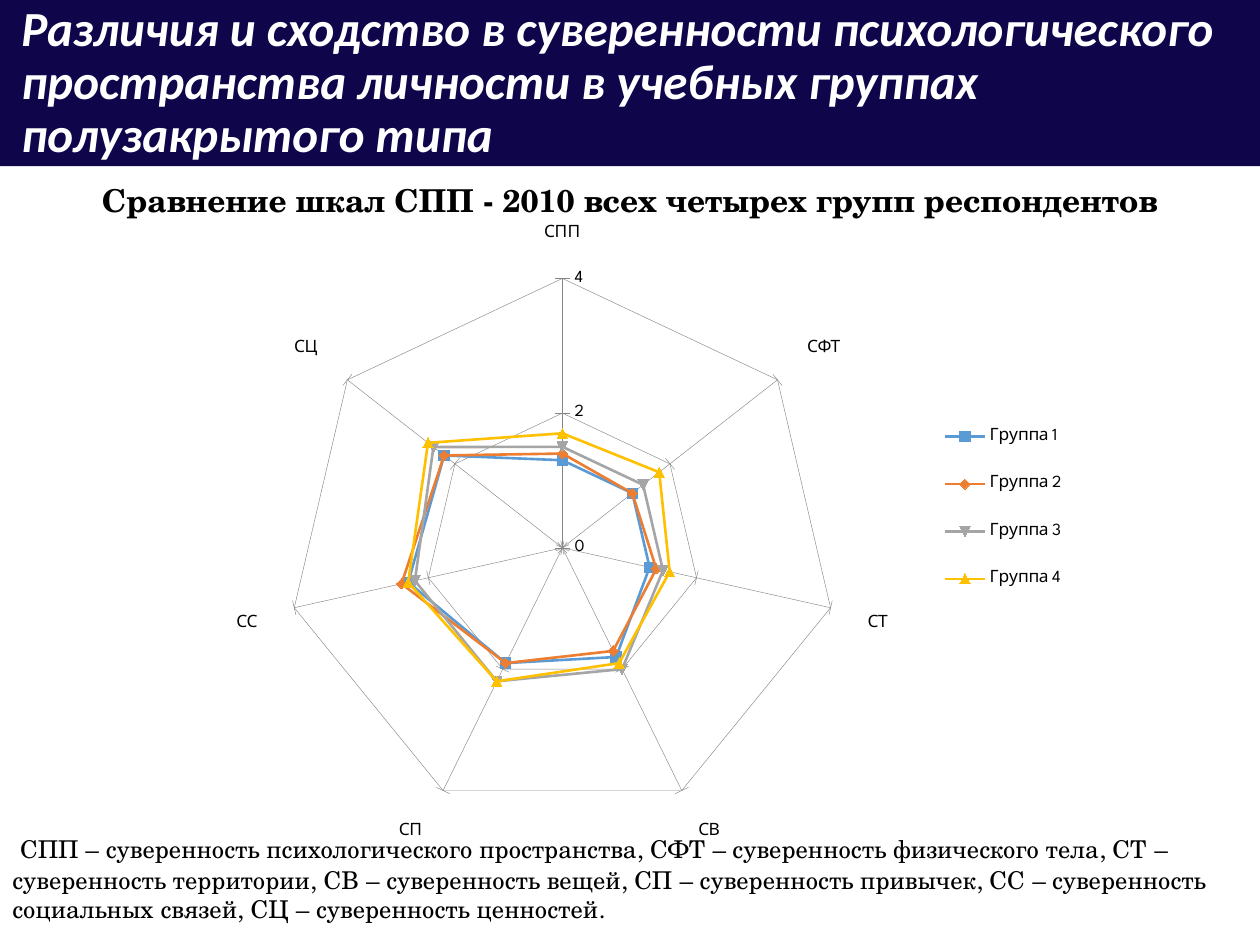
import lxml.etree
import pptx
import pptx.chart.data
import pptx.dml.color
import pptx.enum.chart
import pptx.enum.shapes
import pptx.enum.text
import pptx.oxml.ns
import pptx.util

Pt = pptx.util.Pt
RGB = pptx.dml.color.RGBColor
ALIGN = pptx.enum.text.PP_ALIGN
ANCHOR = pptx.enum.text.MSO_ANCHOR
qn = pptx.oxml.ns.qn

NAVY = RGB(0x0E, 0x05, 0x4B)
WHITE = RGB(0xFF, 0xFF, 0xFF)
BLACK = RGB(0, 0, 0)
GRID = RGB(0x86, 0x86, 0x86)
BLUE = RGB(0x5B, 0x9B, 0xD5)
ORANGE = RGB(0xED, 0x7D, 0x31)
GRAY = RGB(0xA5, 0xA5, 0xA5)
GOLD = RGB(0xFF, 0xC0, 0x00)

SERIF = "TeX Gyre Schola"
SANS = "League Spartan"
SCALES = ["СПП", "СФТ", "СТ", "СВ", "СП ", "СС", "СЦ"]
GROUPS = [
    ("Группа 1", BLUE, (1.3, 1.3, 1.3, 1.8, 1.9, 2.3, 2.2)),
    ("Группа 2", ORANGE, (1.4, 1.3, 1.4, 1.7, 1.9, 2.4, 2.2)),
    ("Группа 3", GRAY, (1.5, 1.5, 1.5, 2.0, 2.2, 2.2, 2.4)),
    ("Группа 4", GOLD, (1.7, 1.8, 1.6, 1.9, 2.2, 2.3, 2.5)),
]


def add_run(p, text, size, font=SERIF, color=BLACK, bold=False, italic=False):
    r = p.add_run()
    r.text = text
    r.font.name = font
    r.font.size = Pt(size)
    r.font.bold = bold
    r.font.italic = italic
    r.font.color.rgb = color


def set_up(tf, align=ALIGN.LEFT, anchor=ANCHOR.TOP, spacing=1.0):
    tf.word_wrap = True
    tf.auto_size = pptx.enum.text.MSO_AUTO_SIZE.NONE
    tf.vertical_anchor = anchor
    p = tf.paragraphs[0]
    p.alignment = align
    p.line_spacing = spacing
    return p


def add_header(s, x, y, w, h):
    band = s.shapes.add_shape(pptx.enum.shapes.MSO_SHAPE.RECTANGLE,
                              Pt(x), Pt(y), Pt(w), Pt(h))
    band.shadow.inherit = False
    band.fill.solid()
    band.fill.fore_color.rgb = NAVY
    band.line.fill.background()
    title = s.shapes.title
    title.element.addprevious(band.element)
    title.left, title.top = Pt(x + 5), Pt(y + 5.5)
    title.width, title.height = Pt(w - 12), Pt(h - 10)
    p = set_up(title.text_frame, anchor=ANCHOR.MIDDLE, spacing=0.9)
    add_run(p, "Различия и сходство в суверенности психологического "
            "пространства личности в учебных группах полузакрытого типа",
            28, font="Calibri", color=WHITE, bold=True, italic=True)


def add_caption(s, x, y, w, h):
    sp = s.shapes.add_textbox(Pt(x), Pt(y), Pt(w), Pt(h))
    p = set_up(sp.text_frame, align=ALIGN.CENTER)
    add_run(p, "Сравнение шкал СПП - 2010 всех четырех групп респондентов",
            18, bold=True)


def add_abbreviations(s, x, y, w, h):
    sp = s.shapes.add_textbox(Pt(x), Pt(y), Pt(w), Pt(h))
    p = set_up(sp.text_frame)
    add_run(p, " ", 18, font=SANS)
    add_run(p, "СПП – суверенность психологического пространства, "
            "СФТ – суверенность физического тела, СТ – суверенность территории, "
            "СВ – суверенность вещей, СП – суверенность привычек, "
            "СС – суверенность социальных связей, СЦ – суверенность ценностей.",
            14)


def set_layout(parent, index, inner, **box):
    layout = parent.find(qn("c:layout"))
    if layout is not None:
        parent.remove(layout)
    layout = lxml.etree.Element(qn("c:layout"))
    parent.insert(index, layout)
    manual = lxml.etree.SubElement(layout, qn("c:manualLayout"))
    settings = {"layoutTarget": "inner"} if inner else {}
    settings.update(xMode="edge", yMode="edge", **box)
    for name, value in settings.items():
        lxml.etree.SubElement(manual, qn("c:" + name)).set("val", str(value))


def style_line(line, color, width):
    line.color.rgb = color
    line.width = Pt(width)


def add_radar(s, x, y, w, h):
    data = pptx.chart.data.CategoryChartData(number_format="0.0")
    data.categories = SCALES
    for name, _, values in GROUPS:
        data.add_series(name, values)
    chart = s.shapes.add_chart(pptx.enum.chart.XL_CHART_TYPE.RADAR_MARKERS,
                               Pt(x), Pt(y), Pt(w), Pt(h), data).chart
    chart.has_title = False
    chart.font.name = SANS
    chart.font.size = Pt(10)
    chart.font.color.rgb = BLACK
    chart.has_legend = True
    chart.legend.position = pptx.enum.chart.XL_LEGEND_POSITION.RIGHT
    chart.legend.include_in_layout = False

    plot = chart.plots[0]
    plot.vary_by_categories = False
    for series, (_, color, _) in zip(plot.series, GROUPS):
        style_line(series.format.line, color, 1.5)
        series.marker.size = 6
        series.marker.format.fill.solid()
        series.marker.format.fill.fore_color.rgb = color
        series.marker.format.line.color.rgb = color

    tick = pptx.enum.chart.XL_TICK_MARK
    for axis, mark in ((chart.category_axis, tick.OUTSIDE),
                       (chart.value_axis, tick.CROSS)):
        axis.has_major_gridlines = True
        axis.major_tick_mark = mark
        axis.minor_tick_mark = tick.NONE
        style_line(axis.major_gridlines.format.line, GRID, 0.25)
        style_line(axis.format.line, GRID, 0.25)
    axis = chart.value_axis
    axis.minimum_scale, axis.maximum_scale, axis.major_unit = 0, 4, 2
    axis.tick_labels.number_format = "0"
    axis.tick_labels.number_format_is_linked = False

    area = chart.element.find(".//" + qn("c:plotArea"))
    set_layout(area, 0, True, x=0.05, y=0.04, w=0.63, h=0.91)
    legend = chart.element.find(".//" + qn("c:legend"))
    set_layout(legend, 1, False, x=0.78, y=0.25, w=0.18, h=0.36)


def main():
    prs = pptx.Presentation()
    prs.slide_width, prs.slide_height = Pt(720), Pt(540)
    s = prs.slides.add_slide(prs.slide_layouts[5])
    add_header(s, 0, 0, 720, 95)
    add_caption(s, 0, 100, 720, 29)
    add_radar(s, 135, 128.6, 503.3, 362)
    add_abbreviations(s, 0, 469, 720, 71)
    prs.save("out.pptx")


if __name__ == "__main__":
    main()
